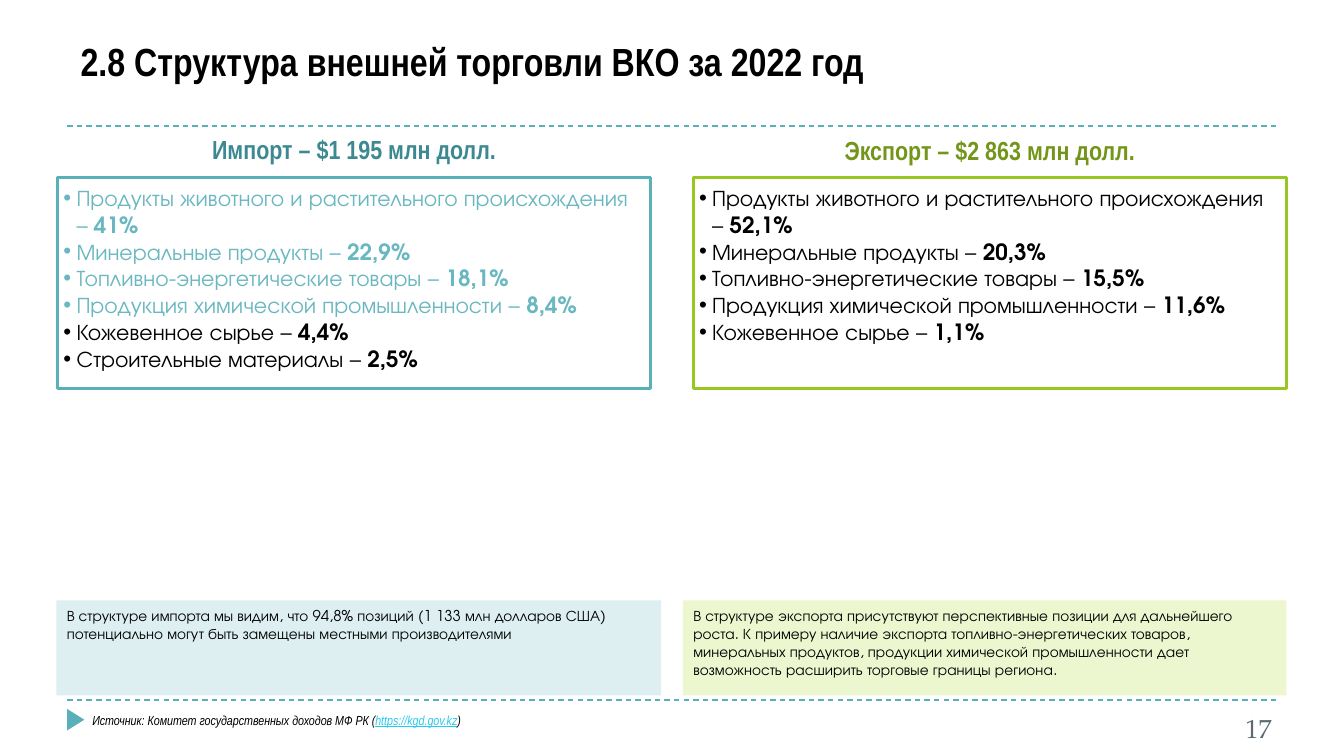
from dataclasses import dataclass

from lxml.etree import SubElement
from pptx import Presentation
from pptx.dml.color import RGBColor
from pptx.enum.dml import MSO_LINE
from pptx.enum.shapes import MSO_CONNECTOR, MSO_SHAPE
from pptx.enum.text import MSO_ANCHOR, MSO_AUTO_SIZE, PP_ALIGN
from pptx.oxml.ns import qn
from pptx.util import Pt


@dataclass(frozen=True)
class Theme:
    black: str = "000000"
    white: str = "FFFFFF"
    grey: str = "5B6973"
    link: str = "26CBEC"
    teal: str = "59B0B9"
    teal_text: str = "69B7C0"
    teal_dark: str = "3D8991"
    teal_pale: str = "DEEFF1"
    green: str = "98C723"
    green_dark: str = "72951A"
    green_pale: str = "ECF7D0"
    narrow: str = "Arial Narrow"
    body: str = "TeX Gyre Adventor"
    serif: str = "TeX Gyre Pagella"
    title_size: float = 21
    heading_size: float = 14
    list_size: float = 12
    note_size: float = 8
    source_size: float = 7


theme = Theme()


def add_run(paragraph, text, font, size, color=theme.black, bold=False, italic=False, underline=False):
    run = paragraph.add_run()
    run.text = text
    run.font.name = font
    run.font.size = Pt(size)
    run.font.color.rgb = RGBColor.from_string(color)
    run.font.bold = bold
    run.font.italic = italic
    run.font.underline = underline


def add_frame(shapes, left, top, width, height, side=7.2, edge=3.6, fill=None, line=None):
    """Add a text box, or a rectangle when a fill is given, and return its text frame."""
    box = Pt(left), Pt(top), Pt(width), Pt(height)
    if fill:
        shape = shapes.add_shape(MSO_SHAPE.RECTANGLE, *box)
        shape.shadow.inherit = False
        shape.fill.solid()
        shape.fill.fore_color.rgb = RGBColor.from_string(fill)
        if line:
            shape.line.color.rgb = RGBColor.from_string(line)
            shape.line.width = Pt(1.5)
        else:
            shape.line.fill.background()
    else:
        shape = shapes.add_textbox(*box)
    frame = shape.text_frame
    frame.word_wrap = True
    frame.vertical_anchor = MSO_ANCHOR.TOP
    frame.margin_left = frame.margin_right = Pt(side)
    frame.margin_top = frame.margin_bottom = Pt(edge)
    frame.paragraphs[0].alignment = PP_ALIGN.LEFT
    return frame


presentation = Presentation()
presentation.slide_width, presentation.slide_height = Pt(720), Pt(405)
slide = presentation.slides.add_slide(presentation.slide_layouts[5])
shapes = slide.shapes

# Dashed rules under the title and above the footer
for y in (67.5, 375):
    rule = shapes.add_connector(MSO_CONNECTOR.STRAIGHT, Pt(36), Pt(y), Pt(684), Pt(y))
    rule.line.color.rgb = RGBColor.from_string(theme.teal)
    rule.line.width = Pt(0.75)
    rule.line.dash_style = MSO_LINE.DASH
    SubElement(rule._element.spPr, qn("a:effectLst"))

# Footer marker
marker = shapes.add_shape(MSO_SHAPE.ISOSCELES_TRIANGLE, Pt(34.8), Pt(381), Pt(11.5), Pt(9.2))
marker.rotation = 90
marker.shadow.inherit = False
marker.fill.solid()
marker.fill.fore_color.rgb = RGBColor.from_string(theme.teal)
marker.line.fill.background()

# Title
title = shapes.title
title.left, title.top, title.width, title.height = Pt(36), Pt(8.6), Pt(556.6), Pt(40.4)
title.text_frame.auto_size = MSO_AUTO_SIZE.NONE
title.text_frame.vertical_anchor = MSO_ANCHOR.BOTTOM
title_paragraph = title.text_frame.paragraphs[0]
title_paragraph.alignment = PP_ALIGN.LEFT
add_run(title_paragraph, "2.8 Структура внешней торговли ВКО за 2022 год",
        theme.narrow, theme.title_size, bold=True)

# Import and export columns: each list row is (product, share, colour)
products = [
    "Продукты животного и растительного происхождения",
    "Минеральные продукты",
    "Топливно-энергетические товары",
    "Продукция химической промышленности",
    "Кожевенное сырье",
    "Строительные материалы",
]
import_colors = [theme.teal_text] * 4 + [theme.black] * 2
export_colors = [theme.black] * 5
columns = [
    dict(left=31, heading_top=71.3, heading="Импорт – $1 195 млн долл.",
         heading_color=theme.teal_dark, line=theme.teal,
         rows=zip(products, ["41%", "22,9%", "18,1%", "8,4%", "4,4%", "2,5%"], import_colors),
         note_left=30.2, note_width=324, note_fill=theme.teal_pale,
         note="В структуре импорта мы видим, что 94,8% позиций (1 133 млн долларов США) "
              "потенциально могут быть замещены местными производителями"),
    dict(left=371.5, heading_top=72, heading="Экспорт – $2 863 млн долл.",
         heading_color=theme.green_dark, line=theme.green,
         rows=zip(products, ["52,1%", "20,3%", "15,5%", "11,6%", "1,1%"], export_colors),
         note_left=365.8, note_width=323.3, note_fill=theme.green_pale,
         note="В структуре экспорта присутствуют перспективные позиции для дальнейшего роста. "
              "К примеру наличие экспорта топливно-энергетических товаров, минеральных продуктов, "
              "продукции химической промышленности дает возможность расширить торговые границы региона."),
]

for column in columns:
    # Heading
    heading = add_frame(shapes, column["left"], column["heading_top"], 317.5, 17.3, side=6, edge=0)
    heading.paragraphs[0].alignment = PP_ALIGN.CENTER
    add_run(heading.paragraphs[0], column["heading"], theme.narrow, theme.heading_size,
            column["heading_color"], bold=True)

    # Bulleted product list
    product_list = add_frame(shapes, column["left"], 95, 317.5, 113, side=3,
                             fill=theme.white, line=column["line"])
    for index, (product, share, color) in enumerate(column["rows"]):
        paragraph = product_list.add_paragraph() if index else product_list.paragraphs[0]
        paragraph.alignment = PP_ALIGN.LEFT
        properties = paragraph._p.get_or_add_pPr()
        properties.set("marL", str(Pt(7)))
        properties.set("indent", str(-Pt(7)))
        SubElement(properties, qn("a:buFont"), typeface="Arial")
        SubElement(properties, qn("a:buChar"), char="•")
        add_run(paragraph, f"{product} – ", theme.body, theme.list_size, color)
        add_run(paragraph, share, theme.body, theme.list_size, color, bold=True)

    # Conclusion
    note = add_frame(shapes, column["note_left"], 321.6, column["note_width"], 51,
                     side=5.6, fill=column["note_fill"])
    add_run(note.paragraphs[0], column["note"], theme.body, theme.note_size)

# Source
source = add_frame(shapes, 42.4, 378, 544.3, 15.8).paragraphs[0]
for text, color, underline in [
    ("Источник: Комитет государственных доходов МФ РК (", theme.black, False),
    ("https://kgd.gov.kz", theme.link, True),
    (")", theme.black, False),
]:
    add_run(source, text, theme.narrow, theme.source_size, color, italic=True, underline=underline)

# Slide number
number = add_frame(shapes, 651.6, 378, 36.7, 21.6).paragraphs[0]
number.alignment = PP_ALIGN.RIGHT
add_run(number, "17", theme.serif, theme.heading_size, theme.grey)

presentation.save("out.pptx")
